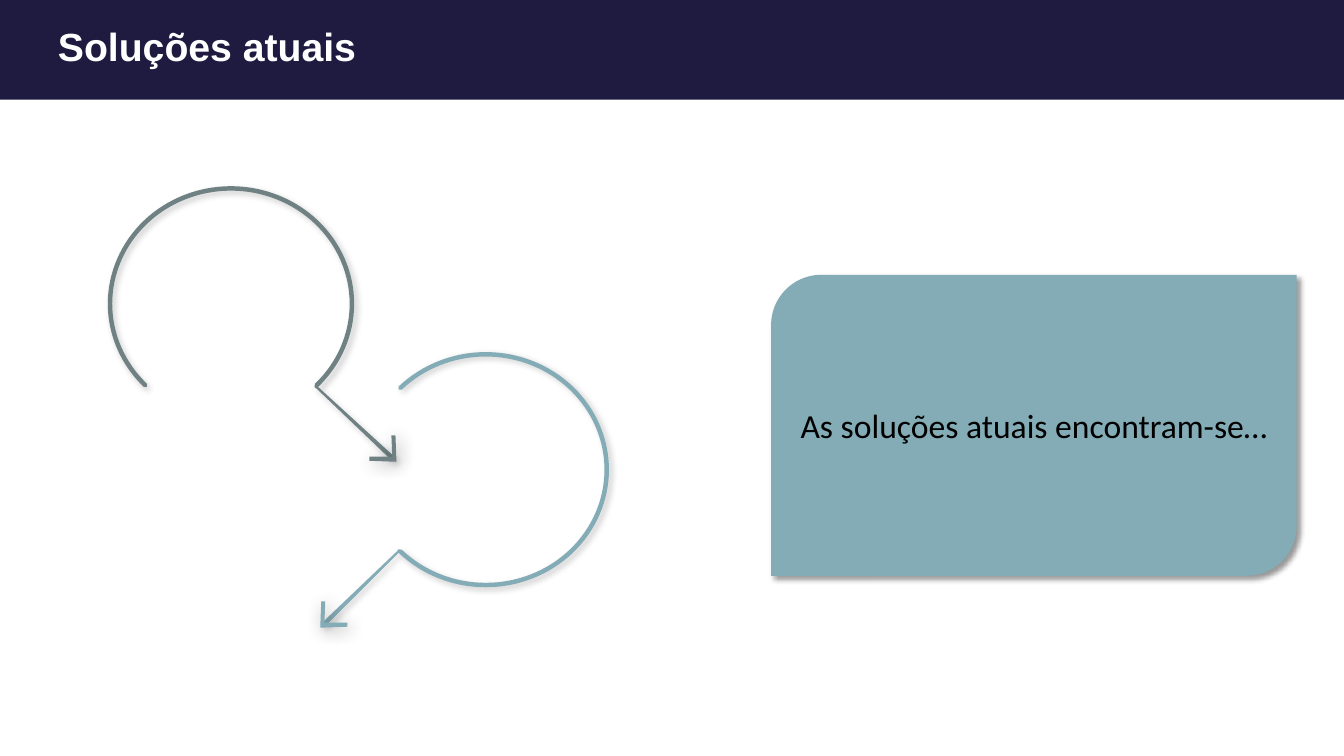
"""Builds the slide on current solutions: title band, two linked ring arrows and a message panel."""
from dataclasses import dataclass
from math import atan, cos, degrees, hypot, radians, sin, tan

from lxml import etree
from pptx import Presentation
from pptx.dml.color import RGBColor
from pptx.enum.shapes import MSO_SHAPE
from pptx.enum.text import MSO_ANCHOR, PP_ALIGN
from pptx.oxml.ns import qn
from pptx.util import Pt

RECTANGLE = MSO_SHAPE.RECTANGLE
DIAGONAL_ROUND = MSO_SHAPE.ROUND_2_DIAG_RECTANGLE
TOP, MIDDLE = MSO_ANCHOR.TOP, MSO_ANCHOR.MIDDLE
LEFT, CENTER = PP_ALIGN.LEFT, PP_ALIGN.CENTER
ARC_STEP = 45
HANDLE = 4 / 3 * tan(radians(ARC_STEP / 4))
HANDLE_ANGLE, HANDLE_SCALE = degrees(atan(HANDLE)), hypot(1, HANDLE)


@dataclass(frozen=True)
class Theme:
    """Colours, fonts and type sizes of the slide."""
    navy: str = "1F1B40"
    grey: str = "6F8183"
    teal: str = "84ACB6"
    white: str = "FFFFFF"
    black: str = "000000"
    title_font: str = "Arial"
    body_font: str = "Calibri"
    title_size: int = 28
    body_size: int = 24


def write_text(frame, text, *, font, size, color, bold=False, align=LEFT,
               anchor=TOP, spacing=None, insets=(7.2, 3.6)):
    """Fill a text frame with one formatted paragraph."""
    frame.word_wrap = True
    frame.vertical_anchor = anchor
    frame.margin_left = frame.margin_right = Pt(insets[0])
    frame.margin_top = frame.margin_bottom = Pt(insets[1])
    para = frame.paragraphs[0]
    para.alignment = align
    para.line_spacing = spacing
    span = para.add_run()
    span.text = text
    span.font.name = font
    span.font.size = Pt(size)
    span.font.bold = bold
    span.font.color.rgb = RGBColor.from_string(color)


class SlideBuilder:
    """Draws styled elements on the current slide."""

    def __init__(self, page, theme):
        """Keep the slide and its theme."""
        self.page = page
        self.theme = theme

    def finish(self, shape, fill, shadow=None):
        """Set fill, outline and an optional (opacity, blur) shadow."""
        shape.fill.solid()
        shape.fill.fore_color.rgb = RGBColor.from_string(fill)
        shape.line.fill.background()
        shape.shadow.inherit = False
        if shadow:
            opacity, blur = shadow
            effects = shape._element.spPr.find(qn("a:effectLst"))
            outer = etree.SubElement(
                effects, qn("a:outerShdw"), blurRad=str(Pt(blur)), dist=str(Pt(3)),
                dir=str(45 * 60000), algn="tl", rotWithShape="0")
            tint = etree.SubElement(outer, qn("a:srgbClr"), val=self.theme.black)
            etree.SubElement(tint, qn("a:alpha"), val=str(opacity * 1000))
        return shape

    def box(self, kind, left, top, width, height, fill, shadow=None):
        """Add a filled preset shape."""
        shape = self.page.shapes.add_shape(kind, Pt(left), Pt(top), Pt(width), Pt(height))
        return self.finish(shape, fill, shadow)

    def label(self, left, top, width, height, text, **style):
        """Add a text box."""
        box = self.page.shapes.add_textbox(Pt(left), Pt(top), Pt(width), Pt(height))
        write_text(box.text_frame, text, **style)

    def outline(self, shapes, start, steps, fill, shadow):
        """Add a closed outline of steps: one point is a line, three are a curve."""
        builder = shapes.build_freeform(Pt(start[0]), Pt(start[1]))
        builder.add_line_segments([(Pt(x), Pt(y)) for step in steps for x, y in step], close=True)
        shape = builder.convert_to_shape()
        lines = iter(list(shape._element.iter(qn("a:lnTo"))))
        for step in steps:
            first, *others = [next(lines) for _ in step]
            if others:
                first.tag = qn("a:cubicBezTo")
            for line in others:
                first.append(line[0])
                line.getparent().remove(line)
        self.finish(shape, fill, shadow)

    def ring_arrow(self, center_x, center_y, start, color):
        """Add a three-quarter ring whose end leaves outwards as an arrow."""
        shapes = self.page.shapes.add_group_shape().shapes
        end = start + 270

        def spot(angle, scale=1.0, inset=0.0, shift=0.0):
            """Return a point on the ring, moved inwards or along the tangent."""
            across, down = cos(radians(angle)), sin(radians(angle))
            return (center_x + (88 - inset) * scale * across - shift * down,
                    center_y + (84 - inset) * scale * down + shift * across)

        def arc(first, last, inset=0.0):
            """Return the curve steps between two angles."""
            turn = 1 if last > first else -1
            return [(spot(angle + turn * HANDLE_ANGLE, HANDLE_SCALE, inset),
                     spot(angle + turn * (ARC_STEP - HANDLE_ANGLE), HANDLE_SCALE, inset),
                     spot(angle + turn * ARC_STEP, inset=inset))
                    for angle in range(first, last, turn * ARC_STEP)]

        tail = [spot(end, 1.86, shift=-1.6), spot(end, 1.88), spot(end, 1.86, shift=1.6),
                spot(end, shift=1.6), spot(end, inset=1.6, shift=2), spot(end, inset=3.2)]
        cap = [spot(start, inset=1.6, shift=-1.5)]
        steps = [*arc(start, end), *[(point,) for point in tail],
                 *arc(end, start, 3.2), *[(point,) for point in cap]]
        self.outline(shapes, spot(start), steps, color, (22, 5))

        tip_x, tip_y = spot(end, 1.9)
        side = 1 if tip_x > center_x else -1
        chevron = [(-19.4, -0.7), (-19.4, -3.6), (-3, -3.6), (-3.6, -18.8), (-0.7, -18.8)]
        steps = [((tip_x + side * x, tip_y + y),) for x, y in chevron]
        self.outline(shapes, (tip_x, tip_y), steps, color, (40, 12))


def main():
    """Build and save the deck."""
    theme = Theme()
    deck = Presentation()
    deck.slide_width, deck.slide_height = Pt(960), Pt(540)
    builder = SlideBuilder(deck.slides.add_slide(deck.slide_layouts[6]), theme)

    builder.box(RECTANGLE, 0, 0, 960, 71.2, theme.navy)
    builder.label(31.8, 15, 417, 41, "Soluções atuais", font=theme.title_font,
                  size=theme.title_size, color=theme.white, bold=True,
                  spacing=0.9, insets=(9.6, 4.8))

    builder.ring_arrow(165, 217, 135, theme.grey)
    builder.ring_arrow(347, 335.5, 225, theme.teal)

    panel = builder.box(DIAGONAL_ROUND, 550.8, 196.3, 375.4, 215, theme.teal, (40, 4))
    write_text(panel.text_frame, "As soluções atuais encontram-se…", font=theme.body_font,
               size=theme.body_size, color=theme.black, align=CENTER, anchor=MIDDLE)

    deck.save("out.pptx")


if __name__ == "__main__":
    main()
